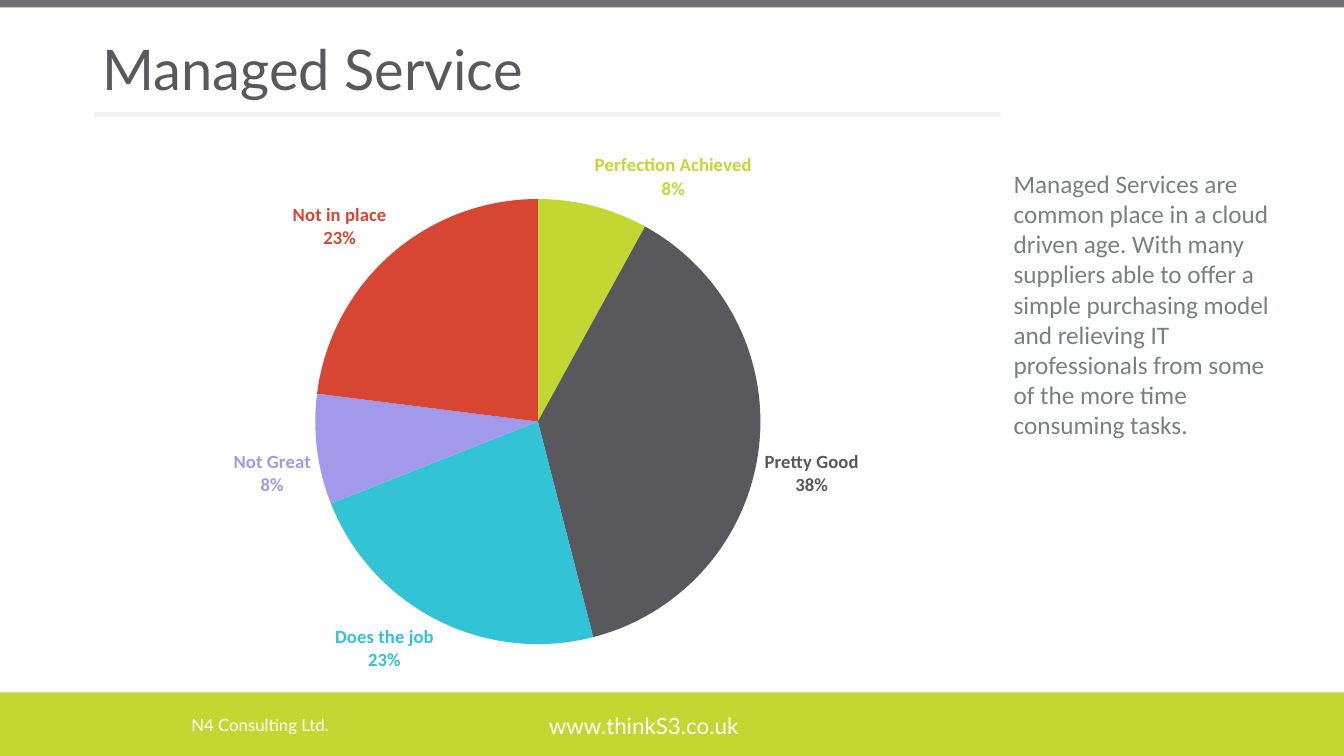
from dataclasses import dataclass

from lxml.etree import SubElement
from pptx import Presentation
from pptx.chart.data import CategoryChartData
from pptx.dml.color import RGBColor
from pptx.enum.chart import XL_CHART_TYPE as ChartType, XL_LABEL_POSITION as LabelPosition
from pptx.enum.shapes import MSO_SHAPE as Shape
from pptx.enum.text import MSO_ANCHOR as Anchor, PP_ALIGN as Align
from pptx.oxml import parse_xml
from pptx.oxml.ns import nsdecls, qn
from pptx.util import Pt


@dataclass(frozen=True)
class Theme:
    lime: str = "C3D732"
    charcoal: str = "59585D"
    cyan: str = "33C3D7"
    lilac: str = "A299EB"
    red: str = "D74633"
    grey: str = "7B7F82"
    pale: str = "F2F2F2"
    white: str = "FFFFFF"
    heading_font: str = "Lato"
    body_font: str = "Calibri"
    title_size: float = 40
    body_size: float = 18
    web_size: float = 16
    company_size: float = 12
    label_size: float = 13.3
    chart_size: float = 10


THEME = Theme()
SLIDE_WIDTH, SLIDE_HEIGHT = 960, 540
RATINGS = [
    ("Perfection Achieved", 8, THEME.lime),
    ("Pretty Good", 38, THEME.charcoal),
    ("Does the job", 23, THEME.cyan),
    ("Not Great", 8, THEME.lilac),
    ("Not in place", 23, THEME.red),
]


def style_font(font, size, color, family, bold=False):
    font.size, font.name, font.bold = Pt(size), family, bold
    font.color.rgb = RGBColor.from_string(color)


def write_text(holder, text, *, size, color, family, align=Align.LEFT,
               anchor=Anchor.TOP, spacing=1.0):
    frame = holder.text_frame
    frame.word_wrap = True
    frame.vertical_anchor = anchor
    paragraph = frame.paragraphs[0]
    paragraph.alignment = align
    paragraph.line_spacing = spacing
    run = paragraph.add_run()
    run.text = text
    style_font(run.font, size, color, family)


def add_text(slide, box, text, **style):
    write_text(slide.shapes.add_textbox(*map(Pt, box)), text, **style)


def add_band(slide, box, color, opacity=100):
    band = slide.shapes.add_shape(Shape.RECTANGLE, *map(Pt, box))
    band.shadow.inherit = False
    band.line.fill.background()
    band.fill.solid()
    band.fill.fore_color.rgb = RGBColor.from_string(color)
    if opacity < 100:
        tint = band.fill._xPr.find(f".//{qn('a:srgbClr')}")
        SubElement(tint, qn("a:alpha")).set("val", str(opacity * 1000))


def add_footer(slide, box):
    left, top, width, height = box
    add_band(slide, box, THEME.lime)
    style = dict(color=THEME.white, family=THEME.heading_font, anchor=Anchor.MIDDLE)
    add_text(slide, (left + 370.8, top + 9.1, 178, 29), "www.thinkS3.co.uk",
             size=THEME.web_size, align=Align.CENTER, **style)
    add_text(slide, (left + 129.6, top + 8.9, 178, 29), "N4 Consulting Ltd.",
             size=THEME.company_size, **style)


def add_heading(slide, box):
    left, top, width, height = box
    title = slide.shapes.title
    title.left, title.top, title.width, title.height = map(Pt, box)
    write_text(title, "Managed Service", size=THEME.title_size, color=THEME.charcoal,
               family=THEME.heading_font, anchor=Anchor.MIDDLE, spacing=0.9)
    add_band(slide, (left + 1, top + 51.1, 647.3, 3.6), THEME.pale)


def label_slice(point, color):
    label = point.data_label
    style_font(label.font, THEME.label_size, color, THEME.body_font, bold=True)
    label.position = LabelPosition.OUTSIDE_END
    element = label._dLbl
    element.insert(1, parse_xml(
        f'<c:numFmt {nsdecls("c")} formatCode="0%" sourceLinked="0"/>'))
    for flag, shown in (("showVal", "0"), ("showCatName", "1"), ("showPercent", "1")):
        element.find(qn(f"c:{flag}")).set("val", shown)
    SubElement(element, qn("c:separator")).text = "\n"


def add_ratings_pie(slide, box):
    ratings = CategoryChartData()
    ratings.categories = [name for name, _, _ in RATINGS]
    ratings.add_series("Series 1", [share for _, share, _ in RATINGS])
    chart = slide.shapes.add_chart(ChartType.PIE, *map(Pt, box), ratings).chart
    chart.has_legend = chart.has_title = False
    style_font(chart.font, THEME.chart_size, THEME.grey, THEME.body_font)
    pie = chart.plots[0]
    pie.vary_by_categories = True
    for index, (_, _, color) in enumerate(RATINGS):
        point = pie.series[0].points[index]
        point.format.fill.solid()
        point.format.fill.fore_color.rgb = RGBColor.from_string(color)
        point.format.line.fill.background()
        label_slice(point, color)

    plot_area = chart._chartSpace.chart.plotArea
    for old_layout in plot_area.findall(qn("c:layout")):
        plot_area.remove(old_layout)
    layout = parse_xml(
        f'<c:layout {nsdecls("c")}><c:manualLayout><c:layoutTarget val="inner"/>'
        '<c:xMode val="edge"/><c:yMode val="edge"/></c:manualLayout></c:layout>')
    _, _, width, height = box
    diameter = 318
    for side, fraction in (("x", 159 / width), ("y", 45 / height),
                           ("w", diameter / width), ("h", diameter / height)):
        SubElement(layout[0], qn(f"c:{side}")).set("val", f"{fraction:.4f}")
    plot_area.insert(0, layout)


def add_commentary(slide, box):
    add_text(slide, box,
             "Managed Services are common place in a cloud driven age. With many "
             "suppliers able to offer a simple purchasing model and relieving IT "
             "professionals from some of the more time consuming tasks.",
             size=THEME.body_size, color=THEME.grey, family=THEME.body_font)


def main():
    deck = Presentation()
    deck.slide_width, deck.slide_height = Pt(SLIDE_WIDTH), Pt(SLIDE_HEIGHT)
    slide = deck.slides.add_slide(deck.slide_layouts[5])
    add_footer(slide, (0, 494.6, SLIDE_WIDTH, 45.4))
    add_band(slide, (0, 0, SLIDE_WIDTH, 5.3), THEME.charcoal, opacity=85)
    add_heading(slide, (66.2, 28.8, 710.6, 46))
    add_ratings_pie(slide, (66.2, 97.2, 648, 399.6))
    add_commentary(slide, (716.9, 116.4, 212.4, 225.4))
    deck.save("out.pptx")


if __name__ == "__main__":
    main()
